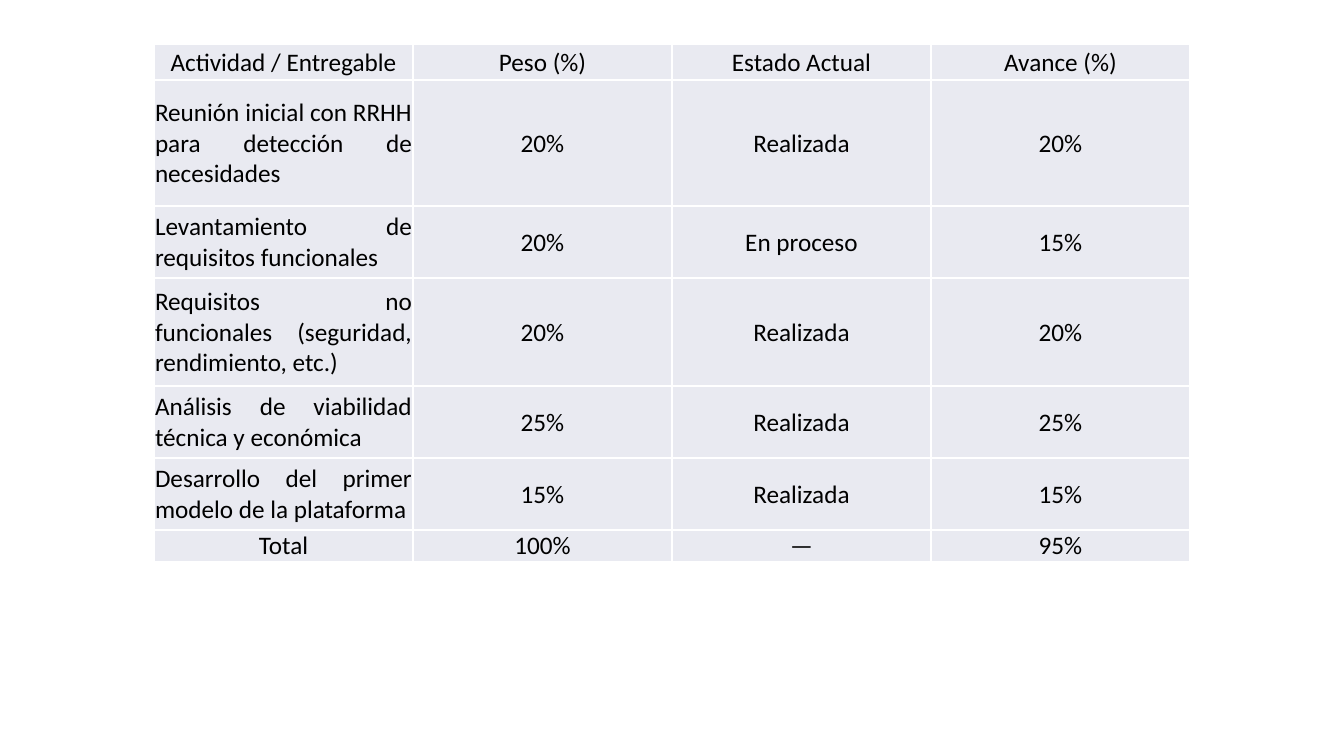
from lxml.etree import SubElement
from pptx import Presentation
from pptx.dml.color import RGBColor
from pptx.enum.text import MSO_ANCHOR, PP_ALIGN
from pptx.oxml.ns import qn
from pptx.util import Pt

EMU_PER_PX = 914400 / 100.8
COLORS = {"text": "000000", "cell": "E9EAF1", "border": "FFFFFF"}

ACTIVITIES = [
    ("Actividad / Entregable", "Peso (%)", "Estado Actual", "Avance (%)"),
    ("Reunión inicial con RRHH para detección de necesidades", "20%", "Realizada", "20%"),
    ("Levantamiento de requisitos funcionales", "20%", "En proceso", "15%"),
    ("Requisitos no funcionales (seguridad, rendimiento, etc.)", "20%", "Realizada", "20%"),
    ("Análisis de viabilidad técnica y económica", "25%", "Realizada", "25%"),
    ("Desarrollo del primer modelo de la plataforma", "15%", "Realizada", "15%"),
    ("Total", "100%", "—", "95%"),
]
ROW_HEIGHTS = [36, 126, 72, 108, 72, 72, 18]
COLUMN_WIDTH = 259


def px(length):
    return round(length * EMU_PER_PX)


class SlideBuilder:
    font = "Calibri"
    size = Pt(18)
    border_width = Pt(1)

    def __init__(self, slide):
        self.slide = slide

    def table(self, left, top, column_width, row_heights, rows):
        columns = len(rows[0])
        grid = self.slide.shapes.add_table(
            len(rows), columns, px(left), px(top),
            px(column_width * columns), px(sum(row_heights))).table
        grid.first_row = False
        grid.horz_banding = False
        for column in grid.columns:
            column.width = px(column_width)
        last = len(rows) - 1
        for r, (height, values) in enumerate(zip(row_heights, rows)):
            grid.rows[r].height = px(height)
            for c, value in enumerate(values):
                is_activity = c == 0 and 0 < r < last
                align = PP_ALIGN.JUSTIFY if is_activity else PP_ALIGN.CENTER
                self.cell(grid.cell(r, c), value, align)

    def cell(self, cell, value, align):
        cell.margin_left = cell.margin_right = cell.margin_top = px(1)
        cell.margin_bottom = 0
        cell.vertical_anchor = MSO_ANCHOR.MIDDLE
        self.borders(cell)
        cell.fill.solid()
        cell.fill.fore_color.rgb = RGBColor.from_string(COLORS["cell"])
        paragraph = cell.text_frame.paragraphs[0]
        paragraph.alignment = align
        run = paragraph.add_run()
        run.text = value
        run.font.name = self.font
        run.font.size = self.size
        run.font.color.rgb = RGBColor.from_string(COLORS["text"])

    def borders(self, cell):
        properties = cell._tc.get_or_add_tcPr()
        for side in ("lnL", "lnR", "lnT", "lnB"):
            line = SubElement(properties, qn(f"a:{side}"), w=str(self.border_width))
            fill = SubElement(line, qn("a:solidFill"))
            SubElement(fill, qn("a:srgbClr"), val=COLORS["border"])


def main():
    deck = Presentation()
    deck.slide_width = px(1344)
    deck.slide_height = px(756)
    builder = SlideBuilder(deck.slides.add_slide(deck.slide_layouts[6]))
    builder.table(154, 44, COLUMN_WIDTH, ROW_HEIGHTS, ACTIVITIES)
    deck.save("out.pptx")


if __name__ == "__main__":
    main()
